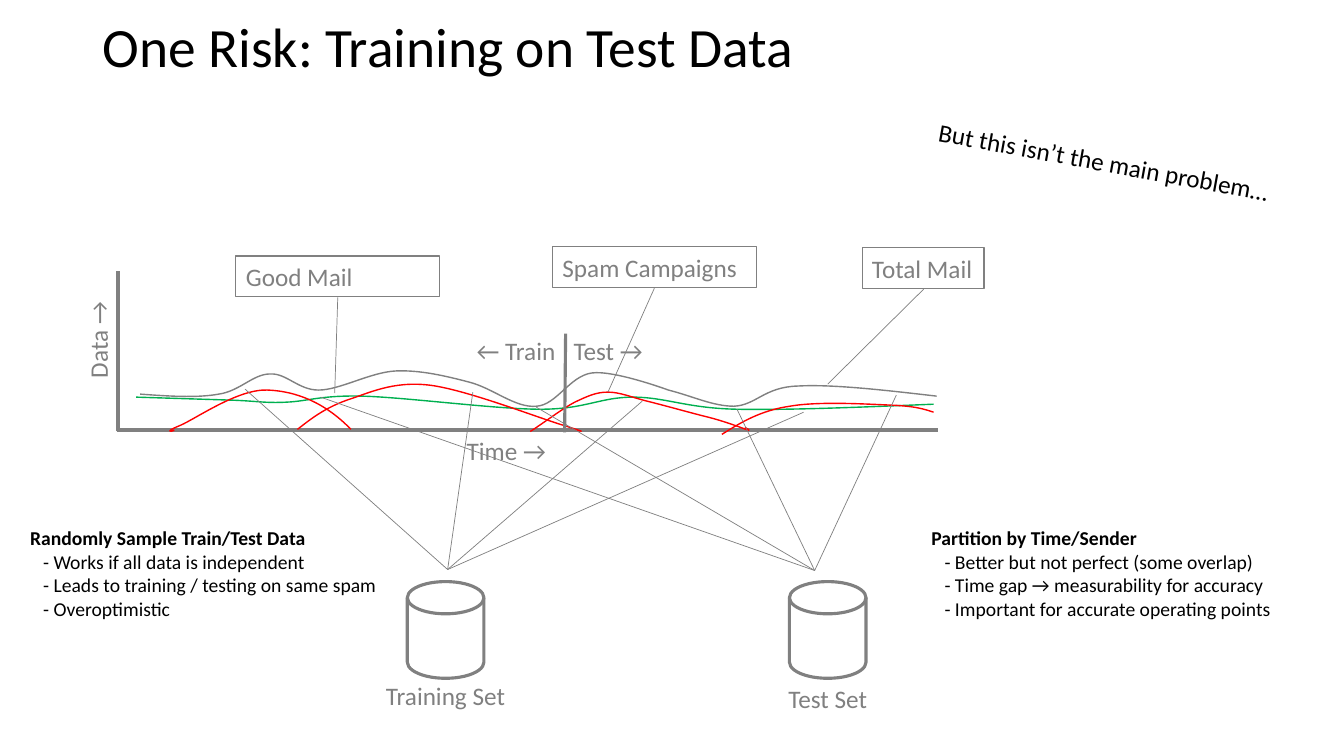
from pptx import Presentation
from pptx.dml.color import RGBColor
from pptx.enum.shapes import MSO_CONNECTOR, MSO_SHAPE
from pptx.enum.text import MSO_ANCHOR, MSO_AUTO_SIZE, PP_ALIGN
from pptx.oxml.ns import qn
from pptx.util import Pt
from lxml import etree

PX = 9144  # 100 px to the inch
FONT = "Calibri"
BLACK = RGBColor(0, 0, 0)
GREY = RGBColor(0x80, 0x80, 0x80)
GREEN = RGBColor(0x00, 0xB0, 0x50)
RED = RGBColor(0xFF, 0, 0)
RECT, DISK = MSO_SHAPE.RECTANGLE, MSO_SHAPE.FLOWCHART_MAGNETIC_DISK
STRAIGHT = MSO_CONNECTOR.STRAIGHT
FIT = MSO_AUTO_SIZE.SHAPE_TO_FIT_TEXT
LEFT, MIDDLE, TOP = PP_ALIGN.LEFT, MSO_ANCHOR.MIDDLE, MSO_ANCHOR.TOP

# Each curve: colour, start point, then two handles and an end per piece
CURVES = [
    (GREY, [(139, 391), (167, 393), (195, 395), (217, 391),
            (238, 388), (251, 371), (268, 371), (284, 370), (296, 387), (316, 387),
            (337, 387), (368, 369), (393, 368), (417, 367), (442, 373), (465, 379),
            (489, 385), (511, 405), (532, 403), (552, 402), (565, 373), (587, 370),
            (609, 367), (663, 387), (663, 387), (687, 393), (707, 403), (728, 403),
            (750, 402), (758, 384), (791, 383), (825, 381), (877, 387), (929, 393)]),
    (GREEN, [(135, 394), (167, 395), (199, 396), (231, 397),
             (256, 398), (263, 400), (284, 399), (306, 398), (318, 392), (359, 393),
             (401, 394), (492, 406), (536, 406), (581, 406), (595, 394), (628, 394),
             (660, 394), (681, 405), (731, 406), (781, 407), (853, 404), (926, 401)]),
    (RED, [(173, 427), (168, 429), (164, 428), (179, 422),
           (195, 415), (236, 386), (265, 387), (293, 388), (322, 399), (348, 426)]),
    (RED, [(295, 426), (309, 415), (322, 405), (344, 397),
           (366, 390), (389, 378), (425, 382), (461, 386), (535, 415), (559, 422),
           (584, 430), (577, 428), (570, 426)]),
    (RED, [(526, 428), (543, 417), (557, 406), (570, 399),
           (583, 393), (591, 389), (603, 389), (615, 389), (626, 394), (642, 398),
           (662, 403), (683, 409), (703, 414), (719, 418), (740, 426), (740, 426),
           (746, 428), (742, 426), (739, 424)]),
    (RED, [(716, 431), (735, 419), (755, 407), (784, 403),
           (812, 398), (861, 401), (884, 402), (908, 403), (917, 406), (926, 409)]),
]

# Data points drawn into each set
TRAIN = [(243, 386), (469, 389), (637, 398), (797, 409)]
TEST = [(318, 394), (532, 404), (731, 406), (889, 392)]

# Callouts: text, box, line from and to, wrap
CALLS = [
    ("Good Mail", (234, 254, 202, 40), (335, 295), (332, 390), True),
    ("Spam Campaigns", (548, 245, 202, 40), (649, 286), (603, 389), True),
    ("Total Mail", (855, 246, 121, 40), (916, 287), (821, 381), False),
]

# Labels: text, box, colour, turn
LABELS = [
    ("Training Set", (373, 670, 140, 40), GREY, 0),
    ("Test Set", (772, 673, 99, 40), GREY, 0),
    ("Time →", (453, 427, 102, 40), GREY, 0),
    ("Data →", (48, 316, 98, 40), GREY, 270),
    ("Test →", (559, 328, 91, 40), GREY, 0),
    ("← Train", (463, 328, 101, 40), GREY, 0),
    ("But this isn’t the main problem…", (919, 141, 356, 40), BLACK, 10.4),
]

NOTES = [
    ((20, 517, 367, 104), ["Randomly Sample Train/Test Data",
                           "- Works if all data is independent",
                           "- Leads to training / testing on same spam",
                           "- Overoptimistic"]),
    ((914, 517, 360, 104), ["Partition by Time/Sender",
                            "- Better but not perfect (some overlap)",
                            "- Time gap → measurability for accuracy",
                            "- Important for accurate operating points"]),
]


def scale(*nums):
    return [n * PX for n in nums]


def write(shape, text, size, color, wrap=False):
    frame = shape.text_frame
    frame.text = text
    frame.word_wrap = wrap
    frame.auto_size = FIT
    frame.vertical_anchor = TOP
    for para in frame.paragraphs:
        para.alignment = LEFT
        for run in para.runs:
            font = run.font
            font.name, font.size, font.color.rgb = FONT, Pt(size), color
    return frame


def add_text(slide, box, text, size, color, turn=0):
    shape = slide.shapes.add_textbox(*scale(*box))
    shape.rotation = turn
    return write(shape, text, size, color)


def add_note(slide, box, lines):
    head, *rest = add_text(slide, box, "\n".join(lines), 14, BLACK).paragraphs
    head.runs[0].font.bold = True
    for para in rest:
        para._p.get_or_add_pPr().set("marL", str(13 * PX))


def outline(shape, color, width):
    shape.shadow.inherit = False
    shape.fill.background()
    shape.line.color.rgb = color
    shape.line.width = Pt(width)


def add_shape(slide, kind, box, width):
    shape = slide.shapes.add_shape(kind, *scale(*box))
    outline(shape, GREY, width)
    return shape


def add_line(slide, start, end, width):
    line = slide.shapes.add_connector(STRAIGHT, *scale(*start, *end))
    line.line.color.rgb = GREY
    line.line.width = Pt(width)
    etree.SubElement(line._element.spPr, qn("a:effectLst"))


def add_curve(slide, color, points):
    pen = slide.shapes.build_freeform(*points[0], scale=PX)
    pen.add_line_segments(points[1:], close=False)
    shape = pen.convert_to_shape()
    outline(shape, color, 1)
    # Join every three straight steps into one Bézier piece
    steps = shape._element.xpath(".//a:lnTo")
    for i in range(0, len(steps), 3):
        bend = etree.Element(qn("a:cubicBezTo"))
        steps[i].addprevious(bend)
        for step in steps[i:i + 3]:
            bend.append(step[0])
            step.getparent().remove(step)


def main():
    deck = Presentation()
    deck.slide_width, deck.slide_height = scale(1333, 750)
    slide = deck.slides.add_slide(deck.slide_layouts[6])

    # Title
    title = add_text(slide, (92, 18, 1150, 62), "One Risk: Training on Test Data", 39.6, BLACK)
    title.word_wrap = True
    title.auto_size = MSO_AUTO_SIZE.NONE
    title.vertical_anchor = MIDDLE
    title.paragraphs[0].line_spacing = 0.9

    # Axes and mail curves
    add_line(slide, (116, 427), (930, 427), 3)
    add_line(slide, (117, 428), (117, 269), 3)
    for color, points in CURVES:
        add_curve(slide, color, points)

    # Callouts
    for text, box, start, end, wrap in CALLS:
        add_line(slide, start, end, 0.5)
        write(add_shape(slide, RECT, box, 0.75), text, 18, GREY, wrap)

    # Sets and the points they sample
    for left, hub, points in ((404, (444, 565), TRAIN), (783, (808, 566), TEST)):
        add_shape(slide, DISK, (left, 577, 76, 96), 2.25)
        for point in points:
            add_line(slide, hub, point, 0.5)

    # Split line, labels and notes
    add_line(slide, (560, 429), (561, 331), 2.25)
    for text, box, color, turn in LABELS:
        add_text(slide, box, text, 18, color, turn)
    for box, lines in NOTES:
        add_note(slide, box, lines)

    deck.save("out.pptx")


if __name__ == "__main__":
    main()
